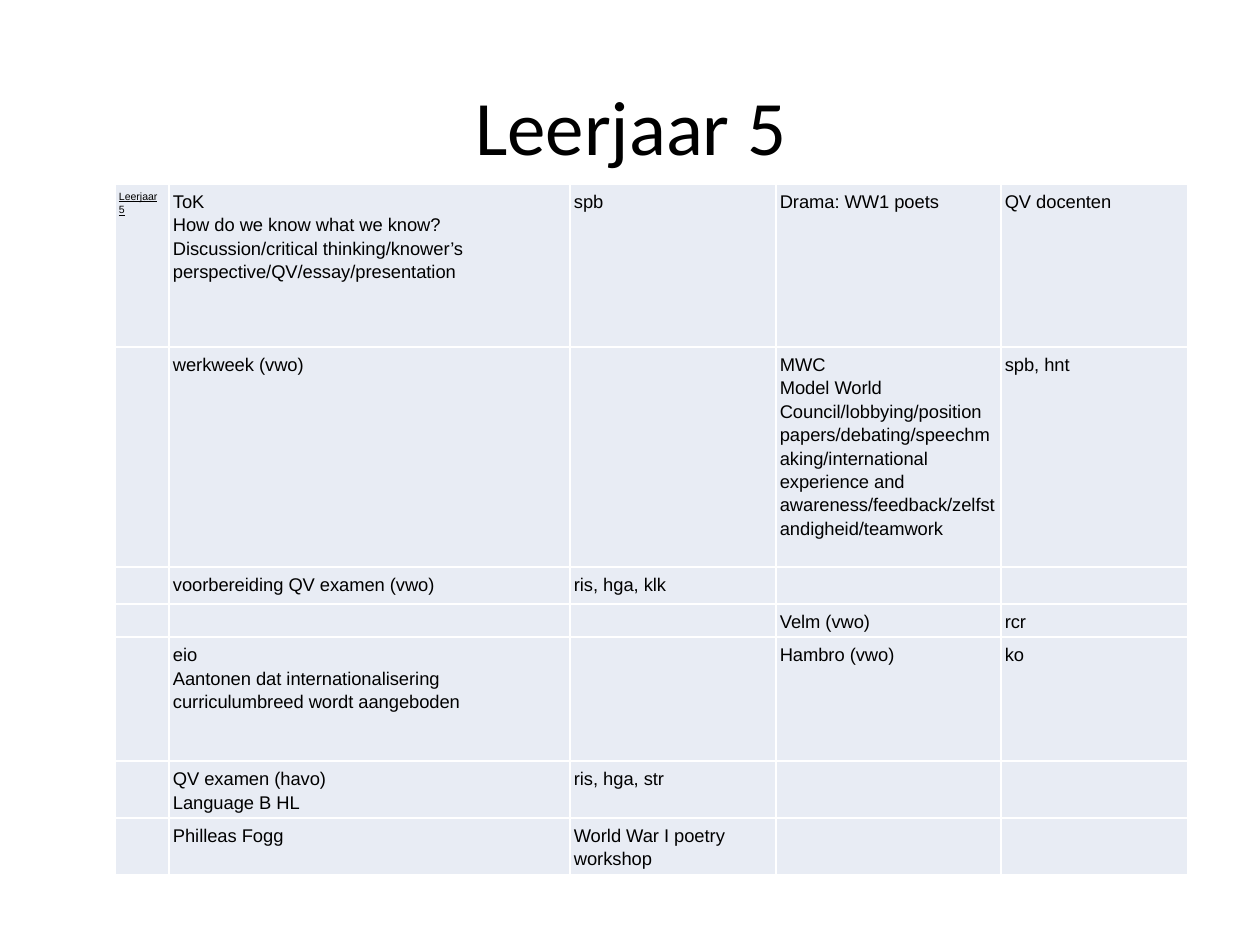
from lxml.etree import SubElement
from pptx import Presentation
from pptx.dml.color import RGBColor
from pptx.enum.text import MSO_ANCHOR, PP_ALIGN
from pptx.oxml.ns import qn
from pptx.util import Pt

PX = 914400 / 126
COLORS = {"text": "000000", "cell": "E8ECF4", "border": "FFFFFF"}
TITLE = "Leerjaar 5"
TITLE_BOX = (64, 46, 1134, 158)
TABLE_LEFT, TABLE_TOP = 115, 184
COLUMN_WIDTHS = [54, 401, 206, 225, 187]
ROW_HEIGHTS = [163, 220, 37, 33, 124, 56, 56]
ACTIVITIES = [
    ["Leerjaar 5",
     "ToK\nHow do we know what we know? Discussion/critical thinking/knower’s "
     "perspective/QV/essay/presentation",
     "spb", "Drama: WW1 poets", "QV docenten"],
    ["", "werkweek (vwo)", "",
     "MWC\nModel World Council/lobbying/position papers/debating/speechmaking/"
     "international experience and awareness/feedback/zelfstandigheid/teamwork",
     "spb, hnt"],
    ["", "voorbereiding QV examen (vwo)", "ris, hga, klk", "", ""],
    ["", "", "", "Velm (vwo)", "rcr"],
    ["", "eio\nAantonen dat internationalisering curriculumbreed wordt aangeboden",
     "", "Hambro (vwo)", "ko"],
    ["", "QV examen (havo)\nLanguage B HL", "ris, hga, str", "", ""],
    ["", "Philleas Fogg", "World War I poetry workshop", "", ""],
]


def px(length):
    """Turn px into EMU."""
    return round(length * PX)


def add_text(paragraph, text, font_name, size, underline=False):
    """Add one formatted run to a paragraph."""
    run = paragraph.add_run()
    run.text = text
    run.font.name = font_name
    run.font.size = Pt(size)
    run.font.underline = underline
    run.font.color.rgb = RGBColor.from_string(COLORS["text"])


def add_borders(cell):
    """Draw a thin line on each side of a cell."""
    properties = cell._tc.get_or_add_tcPr()
    for side in ("a:lnL", "a:lnR", "a:lnT", "a:lnB"):
        line = SubElement(properties, qn(side), w=str(Pt(1)))
        line_fill = SubElement(line, qn("a:solidFill"))
        SubElement(line_fill, qn("a:srgbClr"), val=COLORS["border"])


def fill_cell(cell, text, is_label):
    """Format a cell and write its paragraphs."""
    add_borders(cell)
    cell.fill.solid()
    cell.fill.fore_color.rgb = RGBColor.from_string(COLORS["cell"])
    cell.margin_left = cell.margin_right = px(4)
    cell.margin_top = cell.margin_bottom = px(5)
    cell.vertical_anchor = MSO_ANCHOR.TOP
    frame = cell.text_frame
    if not text:
        SubElement(frame.paragraphs[0]._p, qn("a:endParaRPr"), sz="1050")
        return
    for index, part in enumerate(text.split("\n")):
        paragraph = frame.add_paragraph() if index else frame.paragraphs[0]
        paragraph.line_spacing = 1.15
        add_text(paragraph, part, "Arial", 6 if is_label else 10.5, is_label)


def main():
    """Build the slide with the year's activities."""
    deck = Presentation()
    deck.slide_width, deck.slide_height = px(1260), px(945)
    slide = deck.slides.add_slide(deck.slide_layouts[5])

    title = slide.shapes.title
    title.left, title.top, title.width, title.height = map(px, TITLE_BOX)
    title.text_frame.vertical_anchor = MSO_ANCHOR.MIDDLE
    heading = title.text_frame.paragraphs[0]
    heading.alignment = PP_ALIGN.CENTER
    add_text(heading, TITLE, "Calibri", 44)

    schedule = slide.shapes.add_table(
        len(ROW_HEIGHTS), len(COLUMN_WIDTHS), px(TABLE_LEFT), px(TABLE_TOP),
        px(sum(COLUMN_WIDTHS)), px(sum(ROW_HEIGHTS))).table
    schedule.first_row = schedule.horz_banding = False
    for column, width in zip(schedule.columns, COLUMN_WIDTHS):
        column.width = px(width)
    for row, height, activities in zip(schedule.rows, ROW_HEIGHTS, ACTIVITIES):
        row.height = px(height)
        for index, (cell, text) in enumerate(zip(row.cells, activities)):
            fill_cell(cell, text, index == 0)

    deck.save("out.pptx")


if __name__ == "__main__":
    main()
